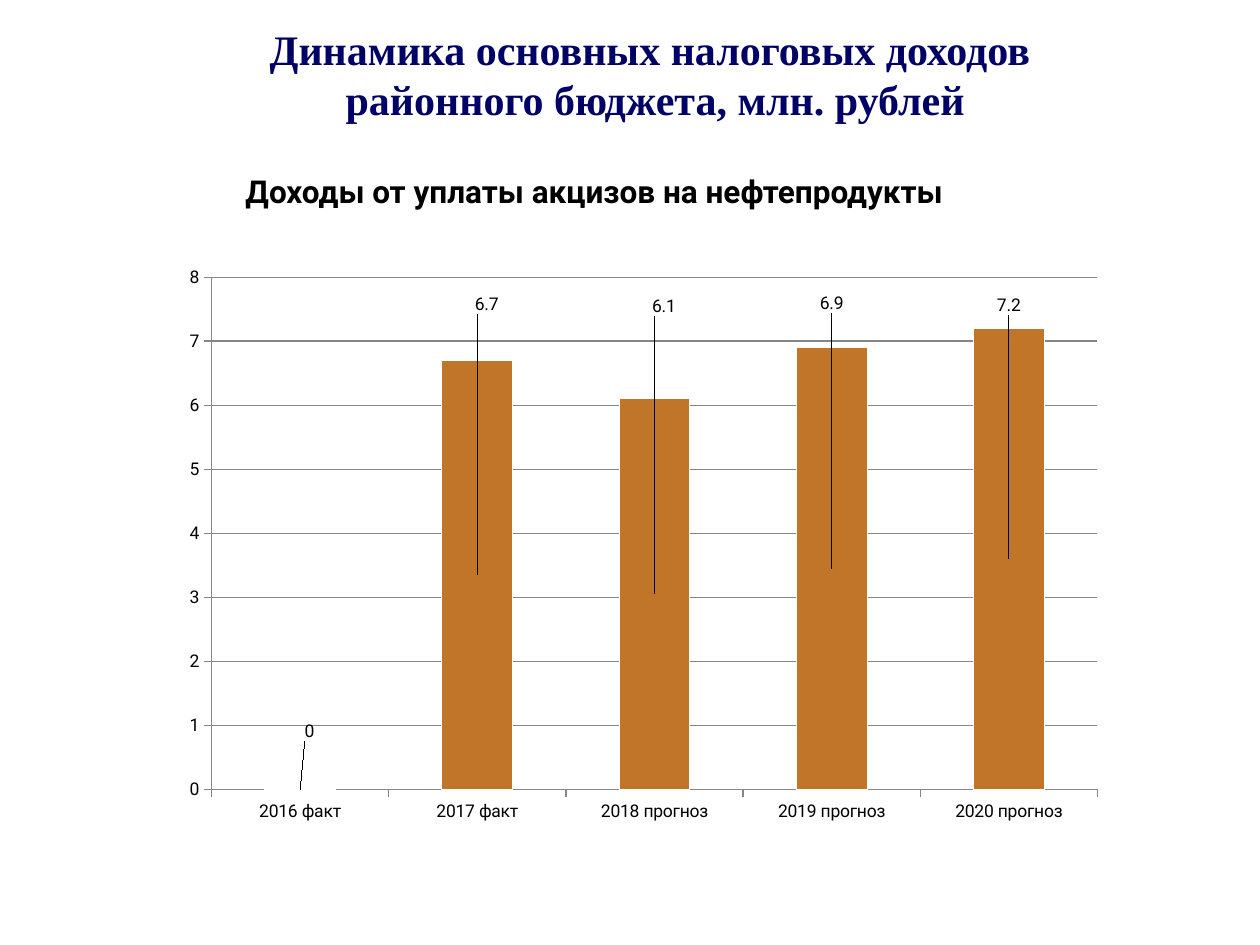
from pptx import Presentation
from pptx.chart.data import CategoryChartData
from pptx.dml.color import RGBColor
from pptx.enum.chart import XL_CHART_TYPE, XL_LABEL_POSITION, XL_TICK_MARK
from pptx.enum.text import MSO_ANCHOR, PP_ALIGN
from pptx.oxml import parse_xml
from pptx.oxml.ns import nsdecls
from pptx.util import Inches, Pt

W, H = 10, 7.5
YEARS = ["2016 факт", "2017 факт", "2018 прогноз", "2019 прогноз", "2020 прогноз"]
EXCISE = [0, 6.7, 6.1, 6.9, 7.2]
# Label shifts from the bar centre, as shares of the chart size
LABEL_SHIFTS = [(0.01, -0.1), (0.01, -0.47), (0.01, -0.5), (0, -0.46), (0, -0.44)]


def color(value):
    return RGBColor.from_string(value)


def box(x, y, w, h):
    """Turn shares of the slide's size into lengths."""
    return Inches(x * W), Inches(y * H), Inches(w * W), Inches(h * H)


def style_font(font, name, size, hex_color, bold=False):
    font.name, font.size, font.bold = name, Pt(size), bold
    font.color.rgb = color(hex_color)


def add_text(slide, area, lines, name, size, hex_color, align, anchor):
    tf = slide.shapes.add_textbox(*box(*area)).text_frame
    tf.word_wrap = True
    tf.vertical_anchor = anchor
    tf.text = "\n".join(lines)
    for p in tf.paragraphs:
        p.alignment = align
        for r in p.runs:
            style_font(r.font, name, size, hex_color, bold=True)


def layout_xml(x, y, w=None, h=None):
    """Manual layout: the plot area if a size is given, else a label shift."""
    if w is None:
        parts = f'<c:x val="{x}"/><c:y val="{y}"/>'
    else:
        parts = ('<c:layoutTarget val="inner"/><c:xMode val="edge"/><c:yMode val="edge"/>'
                 f'<c:x val="{x}"/><c:y val="{y}"/><c:w val="{w}"/><c:h val="{h}"/>')
    return parse_xml(f'<c:layout {nsdecls("c")}><c:manualLayout>{parts}'
                     '</c:manualLayout></c:layout>')


def style_axis(axis):
    axis.major_tick_mark = XL_TICK_MARK.OUTSIDE
    axis.minor_tick_mark = XL_TICK_MARK.NONE
    axis.format.line.color.rgb = color("868686")


def add_column_chart(slide, area):
    data = CategoryChartData()
    data.categories = YEARS
    data.add_series("Series 1", EXCISE)
    chart = slide.shapes.add_chart(
        XL_CHART_TYPE.COLUMN_STACKED, *box(*area), data).chart
    chart.has_legend = chart.has_title = False
    style_font(chart.font, "Roboto", 10, "000000")

    # Axes and grid
    style_axis(chart.category_axis)
    values = chart.value_axis
    style_axis(values)
    values.minimum_scale, values.maximum_scale, values.major_unit = 0, 8, 1
    values.major_gridlines.format.line.color.rgb = color("868686")

    # Columns
    plot = chart.plots[0]
    plot.gap_width, plot.overlap, plot.vary_by_categories = 150, 100, False
    series = plot.series[0]
    series.format.fill.solid()
    series.format.fill.fore_color.rgb = color("C17529")
    series.format.line.color.rgb = color("FFFFFF")

    # Value labels, moved above the columns
    series.data_labels.show_value = True
    for i in range(len(EXCISE)):
        series.points[i].data_label.position = XL_LABEL_POSITION.CENTER
    for label, shift in zip(series._element.xpath(".//c:dLbl"), LABEL_SHIFTS):
        label.insert(1, layout_xml(*shift))

    # Plot area
    plot_area = chart._chartSpace.xpath(".//c:plotArea")[0]
    for old in plot_area.xpath("./c:layout"):
        plot_area.remove(old)
    plot_area.insert(0, layout_xml(0.04, 0.04, 0.94, 0.89))


def main():
    prs = Presentation()
    prs.slide_width, prs.slide_height = Inches(W), Inches(H)
    slide = prs.slides.add_slide(prs.slide_layouts[6])

    # Heading
    add_text(slide, (0.097, 0, 0.846, 0.156),
             ["Динамика основных налоговых доходов ", "районного бюджета, млн. рублей"],
             "Times New Roman", 24, "000066", PP_ALIGN.CENTER, MSO_ANCHOR.MIDDLE)
    # Chart caption
    add_text(slide, (0.185, 0.175, 0.677, 0.053),
             ["Доходы от уплаты акцизов на нефтепродукты"],
             "Roboto", 18, "000000", PP_ALIGN.LEFT, MSO_ANCHOR.TOP)
    # Excise revenue by year
    add_column_chart(slide, (0.138, 0.269, 0.748, 0.609))

    prs.save("out.pptx")


if __name__ == "__main__":
    main()
